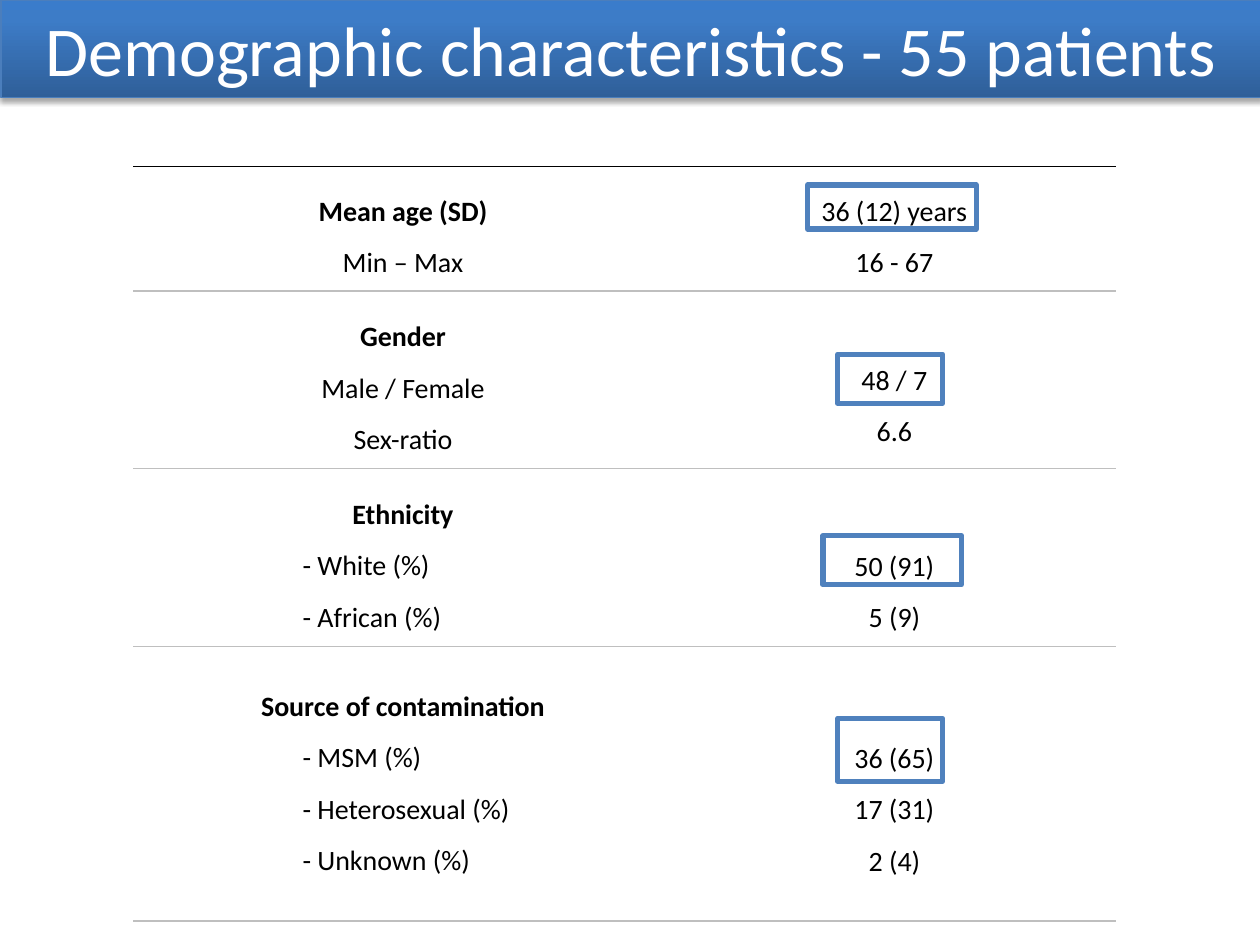
from copy import deepcopy

from lxml.etree import SubElement
from pptx import Presentation
from pptx.dml.color import RGBColor
from pptx.enum.shapes import MSO_SHAPE
from pptx.enum.text import MSO_ANCHOR, MSO_AUTO_SIZE, PP_ALIGN
from pptx.oxml.ns import qn
from pptx.util import Cm, Pt

BLACK = RGBColor(0x00, 0x00, 0x00)
WHITE = RGBColor(0xFF, 0xFF, 0xFF)
GREY = RGBColor(0xBF, 0xBF, 0xBF)
FRAME_BLUE = RGBColor(0x4F, 0x81, 0xBD)
BANNER_LINE = RGBColor(0x4B, 0x7E, 0xBC)
BANNER_STOPS = [
    (0, RGBColor(0x2F, 0x5F, 0x99)),
    (0.8, RGBColor(0x3D, 0x7C, 0xC7)),
    (1, RGBColor(0x3A, 0x7C, 0xCB)),
]
FONT = "Calibri"
NO_STYLE = "{2D5ABB26-0587-4C30-8999-92F81FD0307C}"
ITEM_INDENT = Cm(3.28)

COLUMN_WIDTHS = [10.87, 8.94]
HEADER_HEIGHT = 1.02
# Each group: height, heading, heading spacing, items, itemised, values, value offset
GROUPS = [
    (2.51, "Mean age (SD)", 1.5, ["Min – Max"], False, ["36 (12) years", "16 - 67"], 0),
    (3.58, "Gender", 1.5, ["Male / Female", "Sex-ratio"], False, ["48 / 7", "6.6"], 0.73),
    (3.58, "Ethnicity", 1.5, ["- White (%)", "- African (%)"], True, ["50 (91)", "5 (9)"], 1.05),
    (5.54, "Source of contamination", 1, ["- MSM (%)", "- Heterosexual (%)", "- Unknown (%)"],
     True, ["36 (65)", "17 (31)", "2 (4)"], 0.73),
]
HIGHLIGHTS = [
    (16.28, 3.73, 3.4, 0.89),
    (16.89, 7.14, 2.11, 0.99),
    (16.59, 10.8, 2.79, 0.99),
    (16.89, 14.48, 2.11, 1.27),
]


def write_text(paragraph, text, size=16, color=BLACK, bold=False,
               align=PP_ALIGN.CENTER, spacing=1.5, indent=0):
    """Write formatted text into a paragraph."""
    run = paragraph.add_run()
    run.text = text
    run.font.name = FONT
    run.font.size = Pt(size)
    run.font.bold = bold
    run.font.color.rgb = color
    paragraph.alignment = align
    paragraph.line_spacing = spacing
    if indent:
        paragraph._p.get_or_add_pPr().set("marL", str(indent))


def write_lines(cell, lines):
    """Fill a cell with one paragraph per (text, format) pair."""
    for index, (text, text_format) in enumerate(lines):
        frame = cell.text_frame
        paragraph = frame.paragraphs[0] if index == 0 else frame.add_paragraph()
        write_text(paragraph, text, **text_format)


def add_border(cell, side, color):
    """Draw a one-point border on one side of a cell."""
    line = SubElement(cell._tc.get_or_add_tcPr(), qn(f"a:{side}"), w=str(Pt(1)))
    fill = SubElement(line, qn("a:solidFill"))
    SubElement(fill, qn("a:srgbClr"), val=str(color))


def add_shadow(shape):
    """Give a shape a soft shadow that falls straight down."""
    shape.shadow.inherit = False
    effects = shape.element.spPr.find(qn("a:effectLst"))
    shadow = SubElement(effects, qn("a:outerShdw"), blurRad=str(Pt(3.1)),
                        dist=str(Pt(1.8)), dir="5400000", rotWithShape="0")
    color = SubElement(shadow, qn("a:srgbClr"), val=str(BLACK))
    SubElement(color, qn("a:alpha"), val="35000")


def format_title(title):
    """Turn the title placeholder into the banner across the top."""
    title.left, title.top, title.width, title.height = Cm(0.02), Cm(0), Cm(25.4), Cm(1.96)
    title.fill.gradient()
    title.fill.gradient_angle = 90
    stop_list = title.element.spPr.find(qn("a:gradFill")).find(qn("a:gsLst"))
    stop_list.append(deepcopy(stop_list[-1]))
    for stop, (position, color) in zip(title.fill.gradient_stops, BANNER_STOPS):
        stop.position = position
        stop.color.rgb = color
    title.line.color.rgb = BANNER_LINE
    title.line.width = Pt(0.75)
    add_shadow(title)
    frame = title.text_frame
    frame.auto_size = MSO_AUTO_SIZE.NONE
    frame.vertical_anchor = MSO_ANCHOR.MIDDLE
    write_text(frame.paragraphs[0], "Demographic characteristics - 55 patients",
               size=40, color=WHITE, spacing=1)


def add_demographics_table(slide):
    """Add the table with one row per group of characteristics."""
    heights = [HEADER_HEIGHT] + [group[0] for group in GROUPS]
    shape = slide.shapes.add_table(len(heights), len(COLUMN_WIDTHS), Cm(2.69), Cm(2.34),
                                   Cm(sum(COLUMN_WIDTHS)), Cm(sum(heights)))
    table = shape.table
    next(shape.element.iter(qn("a:tableStyleId"))).text = NO_STYLE
    table.first_row = table.horz_banding = False
    for column, width in zip(table.columns, COLUMN_WIDTHS):
        column.width = Cm(width)
    for index, (row, height) in enumerate(zip(table.rows, heights)):
        row.height = Cm(height)
        for cell in row.cells:
            cell.margin_left = cell.margin_right = Cm(0.13)
            cell.margin_top = cell.margin_bottom = 0
            cell.vertical_anchor = MSO_ANCHOR.MIDDLE
            if index:
                add_border(cell, "lnT", BLACK if index == 1 else GREY)
            add_border(cell, "lnB", GREY if index else BLACK)
            cell.fill.background()
    for index, group in enumerate(GROUPS, start=1):
        _, heading, spacing, items, itemised, values, offset = group
        item_format = {"align": PP_ALIGN.LEFT, "indent": ITEM_INDENT} if itemised else {}
        heading_line = (heading, {"bold": True, "spacing": spacing})
        write_lines(table.cell(index, 0), [heading_line] + [(item, item_format) for item in items])
        value_cell = table.cell(index, 1)
        value_cell.margin_top = Cm(offset)
        write_lines(value_cell, [(value, {}) for value in values])


def add_highlight(slide, left, top, width, height):
    """Add an unfilled blue frame around a key value."""
    shape = slide.shapes.add_shape(MSO_SHAPE.RECTANGLE, Cm(left), Cm(top), Cm(width), Cm(height))
    shape.shadow.inherit = False
    shape.fill.background()
    shape.line.color.rgb = FRAME_BLUE
    shape.line.width = Pt(3)


def main():
    """Build the slide and save the presentation."""
    presentation = Presentation()
    presentation.slide_width, presentation.slide_height = Cm(25.4), Cm(19.05)
    slide = presentation.slides.add_slide(presentation.slide_layouts[5])
    format_title(slide.shapes.title)
    add_demographics_table(slide)
    for highlight in HIGHLIGHTS:
        add_highlight(slide, *highlight)
    presentation.save("out.pptx")


if __name__ == "__main__":
    main()
